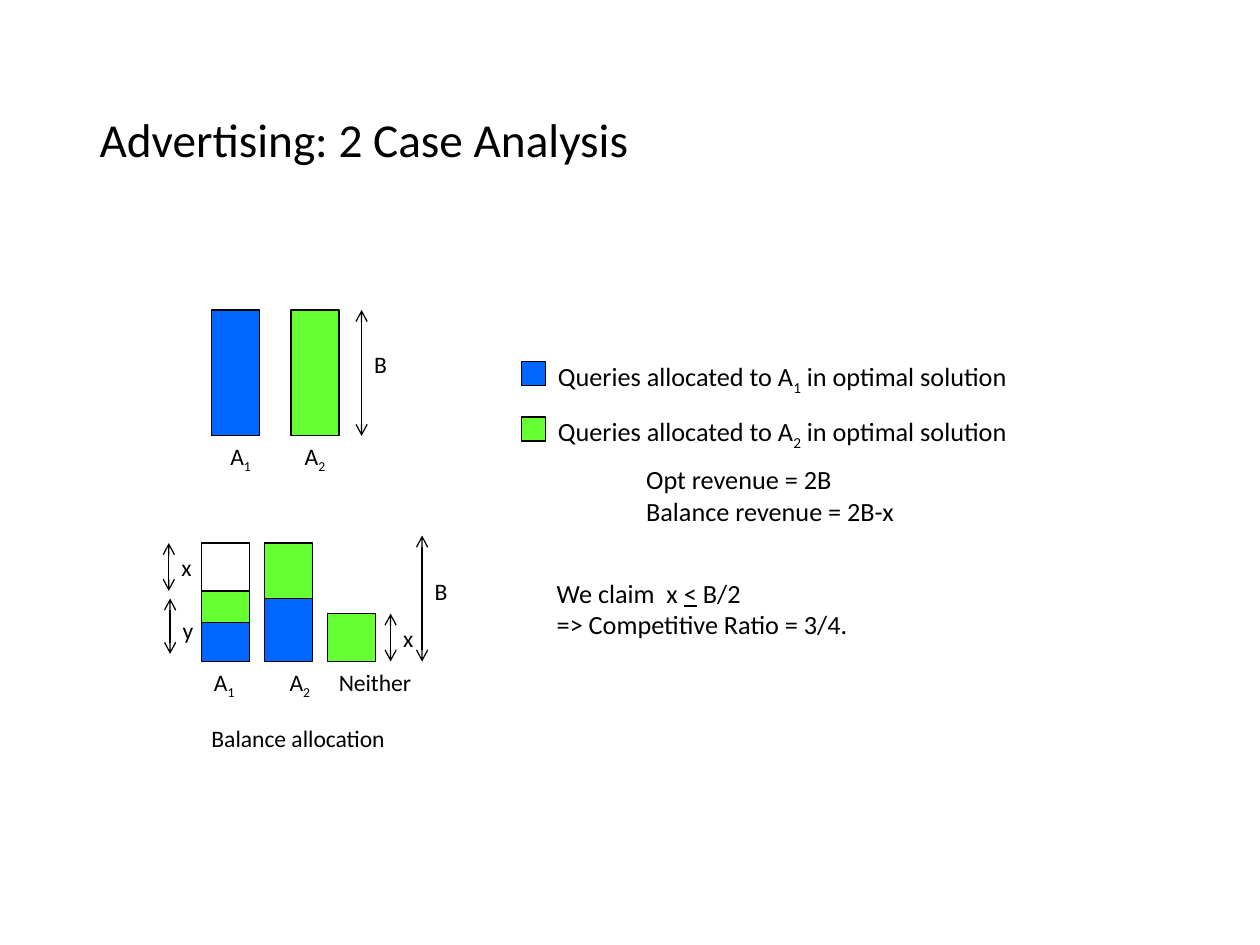
from lxml import etree
from pptx import Presentation
from pptx import util as u
from pptx.dml.color import RGBColor
from pptx.enum import shapes, text
from pptx.oxml import ns

PX = 9144
BLUE = RGBColor(0x00, 0x66, 0xFF)
GREEN = RGBColor(0x66, 0xFF, 0x33)
BLACK = RGBColor(0, 0, 0)
FONT = "Calibri"
LABEL_SIZE = 13.5
BODY_SIZE = 15
BAR_W = 38
LABEL_H = 33
SUB = "sub"
UNDERLINE = "underline"


def px(*lengths):
    return [u.Emu(length * PX) for length in lengths]


def add_runs(paragraph, runs, size):
    for wording, style in runs:
        run = paragraph.add_run()
        run.text = wording
        run.font.size = u.Pt(size)
        run.font.name = FONT
        run.font.color.rgb = BLACK
        if style == SUB:
            run._r.get_or_add_rPr().set("baseline", "-25000")
        elif style == UNDERLINE:
            run.font.underline = True


def add_text(parent, box, lines, size=LABEL_SIZE, wrap=False):
    frame = parent.add_textbox(*px(*box)).text_frame
    frame.word_wrap = wrap
    for i, runs in enumerate(lines):
        paragraph = frame.add_paragraph() if i else frame.paragraphs[0]
        add_runs(paragraph, runs, size)


def add_block(parent, box, color):
    block = parent.add_shape(shapes.MSO_SHAPE.RECTANGLE, *px(*box))
    block.shadow.inherit = False
    if color is None:
        block.fill.background()
    else:
        block.fill.solid()
        block.fill.fore_color.rgb = color
    block.line.color.rgb = BLACK
    block.line.width = u.Pt(0.75)


def add_measure(parent, x, top, bottom, letter, letter_top, letter_w):
    arrow = parent.add_connector(shapes.MSO_CONNECTOR.STRAIGHT, *px(x, top, x, bottom))
    arrow.line.color.rgb = BLACK
    arrow.line.width = u.Pt(0.75)
    line = arrow.line._get_or_add_ln()
    for end in ("a:headEnd", "a:tailEnd"):
        etree.SubElement(line, ns.qn(end), type="arrow")
    etree.SubElement(arrow._element.spPr, ns.qn("a:effectLst"))
    add_text(parent, (x, letter_top, letter_w, LABEL_H), [[(letter, None)]])


def add_advertiser(parent, x, y, number):
    add_text(parent, (x, y, 37, LABEL_H), [[("A", None), (number, SUB)]])


def add_heading(slide, box):
    title = slide.shapes.title
    title.left, title.top, title.width, title.height = px(*box)
    title.text_frame.vertical_anchor = text.MSO_ANCHOR.MIDDLE
    paragraph = title.text_frame.paragraphs[0]
    paragraph.alignment = text.PP_ALIGN.LEFT
    paragraph.line_spacing = 0.9
    add_runs(paragraph, [("Advertising: 2 Case Analysis", None)], 27)


def add_optimal_allocation(slide, x, y, budget):
    group = slide.shapes.add_group_shape().shapes
    for i, color in enumerate((BLUE, GREEN)):
        add_block(group, (x + 63 * i, y, BAR_W, budget), color)
        add_advertiser(group, x + 5 + 59 * i, y + budget, str(i + 1))
    add_measure(group, x + 119, y, y + budget, "B", y + 27, 31)


def add_balance_allocation(slide, x, base):
    group = slide.shapes.add_group_shape().shapes
    bars = (
        ((BLUE, 31), (GREEN, 25), (None, 38)),
        ((BLUE, 50), (GREEN, 44)),
        ((GREEN, 38),),
    )
    for i, parts in enumerate(bars):
        bottom = base
        for color, height in parts:
            bottom -= height
            add_block(group, (x + 50 * i, bottom, BAR_W, height), color)
    measures = (
        (-26, 94, 56, "x", 91, 28),
        (-25, 50, 6, "y", 41, 29),
        (150, 38, 0, "x", 35, 28),
        (175, 100, 0, "B", 72, 31),
    )
    for dx, top, bottom, letter, letter_top, letter_w in measures:
        add_measure(group, x + dx, base - top, base - bottom, letter, base - letter_top, letter_w)
    for i in range(2):
        add_advertiser(group, x + 60 * i, base, str(i + 1))
    add_text(group, (x + 99, base, 78, LABEL_H), [[("Neither", None)]])
    add_text(group, (x - 2, base + 45, 158, LABEL_H), [[("Balance allocation", None)]])


def add_legend(slide, x, y):
    for i, color in enumerate((BLUE, GREEN)):
        top = y + 44 * i
        add_block(slide.shapes, (x, top, 19, 19), color)
        entry = [("Queries allocated to A", None), (str(i + 1), SUB), (" in optimal solution", None)]
        add_text(slide.shapes, (x + 19, top - 6, 377, 61), [entry], BODY_SIZE, True)


def add_conclusions(slide, x, y):
    revenue = [[("Opt revenue = 2B", None)], [("Balance revenue = 2B-x", None)]]
    claim = [
        [("We claim  x ", None), ("<", UNDERLINE), (" B/2", None)],
        [("=> Competitive Ratio = 3/4.", None)],
    ]
    add_text(slide.shapes, (x + 71, y, 219, 61), revenue, BODY_SIZE)
    add_text(slide.shapes, (x, y + 90, 438, 61), claim, BODY_SIZE, True)


def main():
    deck = Presentation()
    deck.slide_width, deck.slide_height = px(1000, 750)
    slide = deck.slides.add_slide(deck.slide_layouts[5])
    add_heading(slide, (69, 40, 862, 145))
    add_optimal_allocation(slide, 168, 246, 100)
    add_balance_allocation(slide, 160, 525)
    add_legend(slide, 414, 287)
    add_conclusions(slide, 432, 363)
    deck.save("out.pptx")


if __name__ == "__main__":
    main()
